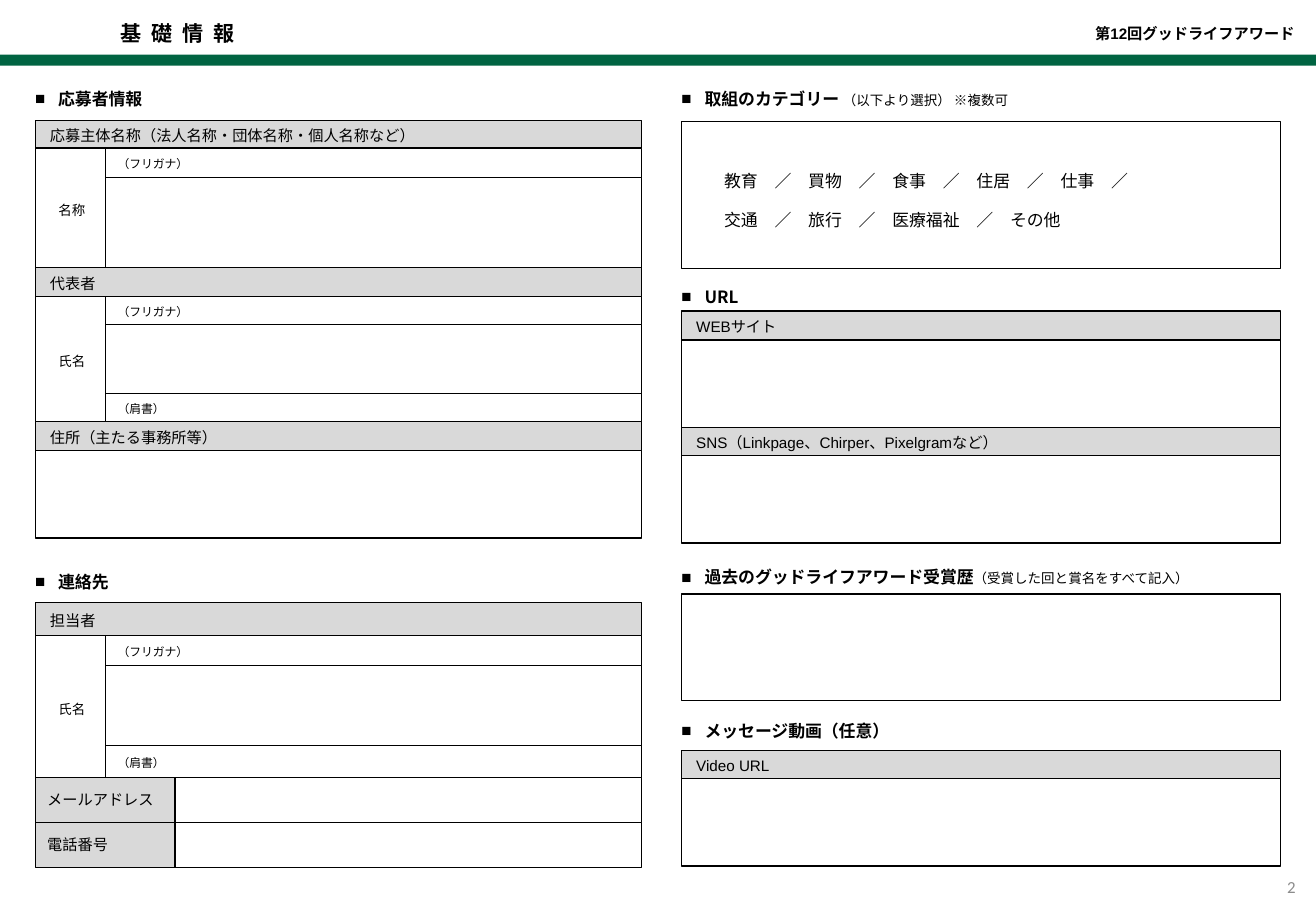
from lxml.etree import SubElement
from pptx import Presentation
from pptx.dml.color import RGBColor
from pptx.enum.shapes import MSO_SHAPE as Shape
from pptx.enum.text import MSO_ANCHOR as Anchor, MSO_AUTO_SIZE as Fit, PP_ALIGN as Align
from pptx.oxml.ns import qn
from pptx.util import Pt

PX = 9144
BLACK = RGBColor(0, 0, 0)
WHITE = RGBColor(255, 255, 255)
GREEN = RGBColor(0x00, 0x64, 0x42)
PALE_GRAY = RGBColor(0xD9, 0xD9, 0xD9)
PAGE_GRAY = RGBColor(0x8C, 0x8C, 0x8C)
ASIAN_FONT = "Noto Sans CJK JP"


def insets(left, top, right=10, bottom=8):
    return {"margin_left": left * PX, "margin_top": top * PX,
            "margin_right": right * PX, "margin_bottom": bottom * PX}


def font(size, name="Arial", bold=False):
    return {"size": Pt(size), "name": name, "bold": bold}


HEADING = font(10, bold=True)
NOTE = font(8)
GAPS = {"space_before": Pt(2.4), "space_after": Pt(2.4)}
CELLS = {
    "blank": (WHITE, insets(10, 8), {}, font(9)),
    "header": (PALE_GRAY, insets(12, 10), {}, font(9)),
    "contact": (PALE_GRAY, insets(10, 8), {}, font(9)),
    "label": (WHITE, insets(12, 12), {"alignment": Align.CENTER}, font(8, "Calibri")),
    "field": (WHITE, insets(10, 10), {}, font(7)),
    "choices": (WHITE, insets(35, 8), {"line_spacing": 1.5, **GAPS}, font(10)),
}


class EntryForm:
    def __init__(self, width, height):
        self.deck = Presentation()
        self.deck.slide_width = width * PX
        self.deck.slide_height = height * PX
        self.slide = self.deck.slides.add_slide(self.deck.slide_layouts[5])

    def apply(self, target, values):
        for name, value in values.items():
            setattr(target, name, value)

    def add_words(self, paragraph, text, style, color=BLACK, spacing=None):
        run = paragraph.add_run()
        run.text = text
        self.apply(run.font, style)
        run.font.color.rgb = color
        properties = run._r.get_or_add_rPr()
        if spacing:
            properties.set("spc", str(spacing))
        SubElement(properties, qn("a:ea")).set("typeface", ASIAN_FONT)

    def title(self, box, text):
        title = self.slide.shapes.title
        self.apply(title, dict(zip(("left", "top", "width", "height"), (n * PX for n in box))))
        self.apply(title.text_frame, {"vertical_anchor": Anchor.BOTTOM, "word_wrap": True,
                                      "auto_size": Fit.NONE, **insets(10, 5, 10, 5)})
        paragraph = title.text_frame.paragraphs[0]
        self.apply(paragraph, {"alignment": Align.LEFT, "line_spacing": 0.9})
        self.add_words(paragraph, text, font(12.5, bold=True), spacing=600)

    def text(self, box, text, style, frame, layout, color=BLACK):
        area = self.slide.shapes.add_textbox(*(n * PX for n in box))
        self.apply(area.text_frame, {"word_wrap": True, **frame})
        paragraph = area.text_frame.paragraphs[0]
        self.apply(paragraph, layout)
        self.add_words(paragraph, text, style, color)

    def heading(self, box, text, note="", style=HEADING):
        area = self.slide.shapes.add_textbox(*(n * PX for n in box))
        self.apply(area.text_frame, {"word_wrap": False, "auto_size": Fit.SHAPE_TO_FIT_TEXT})
        paragraph = area.text_frame.paragraphs[0]
        properties = paragraph._p.get_or_add_pPr()
        properties.set("marL", str(19 * PX))
        properties.set("indent", str(-19 * PX))
        SubElement(properties, qn("a:buFont")).set("typeface", "Arial")
        SubElement(properties, qn("a:buChar")).set("char", "■")
        paragraph.space_after = Pt(2.4)
        self.add_words(paragraph, text, style)
        if note:
            self.add_words(paragraph, note, NOTE)

    def rectangle(self, box, fill):
        shape = self.slide.shapes.add_shape(Shape.RECTANGLE, *(n * PX for n in box))
        shape.shadow.inherit = False
        shape.fill.solid()
        shape.fill.fore_color.rgb = fill
        shape.line.fill.background()
        return shape

    def cell(self, box, kind="blank", *lines):
        fill, margins, layout, style = CELLS[kind]
        shape = self.rectangle(box, fill)
        shape.line.color.rgb = BLACK
        shape.line.width = Pt(0.75)
        frame = shape.text_frame
        self.apply(frame, {"vertical_anchor": Anchor.MIDDLE, "word_wrap": True, **margins})
        for index, line in enumerate(lines):
            paragraph = frame.add_paragraph() if index else frame.paragraphs[0]
            self.apply(paragraph, {"alignment": Align.LEFT, **layout})
            if not index:
                paragraph.space_before = None
            self.add_words(paragraph, line, style)

    def stack(self, left, right, edges, rows):
        for top, bottom, row in zip(edges, edges[1:], rows):
            if row:
                self.cell((left, top, right - left, bottom - top), *row)

    def entry(self, label, edges, rows):
        self.stack(LEFT, LABEL_END, (edges[0], edges[-1]), [("label", label)])
        self.stack(LABEL_END, LEFT_END, edges, rows)


LEFT, LABEL_END, CONTACT_END, LEFT_END = 29, 87, 144, 528
RIGHT, RIGHT_END = 561, 1054
BLANK = ("blank",)
READING = ("field", "（フリガナ）")
POSITION = ("field", "（肩書）")


def main():
    form = EntryForm(1083, 750)
    form.rectangle((0, 45, 1083, 9), GREEN)
    form.title((89, 16, 453, 27), "基礎情報")
    form.text((855, 15, 220, 27), "第12回グッドライフアワード", font(9, bold=True),
              {"vertical_anchor": Anchor.BOTTOM, **insets(10, 8)},
              {"alignment": Align.RIGHT, "line_spacing": 0.9})
    form.text((1013, 710, 63, 40), "2", font(10, "Calibri"),
              {"vertical_anchor": Anchor.MIDDLE}, {"alignment": Align.RIGHT}, PAGE_GRAY)

    form.heading((19, 68, 109, 27), "応募者情報")
    form.stack(LEFT, LEFT_END, (99, 122, 220, 244, 347, 371, 443), [
        ("header", "応募主体名称（法人名称・団体名称・個人名称など）"), None,
        ("header", "代表者"), None,
        ("header", "住所（主たる事務所等）"), BLANK])
    form.entry("名称", (122, 146, 220), [READING, BLANK])
    form.entry("氏名", (244, 267, 324, 347), [READING, BLANK, POSITION])

    form.heading((19, 466, 81, 27), "連絡先")
    form.stack(LEFT, LEFT_END, (496, 523), [("header", "担当者")])
    form.entry("氏名", (523, 548, 614, 640), [READING, BLANK, POSITION])
    contact_edges = (640, 677, 714)
    form.stack(LEFT, CONTACT_END, contact_edges,
               [("contact", "メールアドレス"), ("contact", "電話番号")])
    form.stack(CONTACT_END, LEFT_END, contact_edges, [BLANK, BLANK])

    form.heading((551, 68, 292, 27), "取組のカテゴリー ", "（以下より選択） ※複数可")
    form.stack(RIGHT, RIGHT_END, (100, 221), [
        ("choices", "教育　／　買物　／　食事　／　住居　／　仕事　／",
         "交通　／　旅行　／　医療福祉　／　その他")])

    form.heading((551, 231, 76, 31), "URL", style=font(10, ASIAN_FONT, True))
    form.stack(RIGHT, RIGHT_END, (256, 280, 352, 375, 447), [
        ("header", "WEBサイト"), BLANK,
        ("header", "SNS（Linkpage、Chirper、Pixelgramなど）"), BLANK])

    form.heading((551, 462, 443, 27), "過去のグッドライフアワード受賞歴",
                 "（受賞した回と賞名をすべて記入）")
    form.stack(RIGHT, RIGHT_END, (489, 577), [BLANK])

    form.heading((551, 588, 193, 27), "メッセージ動画（任意）")
    form.stack(RIGHT, RIGHT_END, (618, 641, 713), [("header", "Video URL"), BLANK])
    form.deck.save("out.pptx")


if __name__ == "__main__":
    main()
